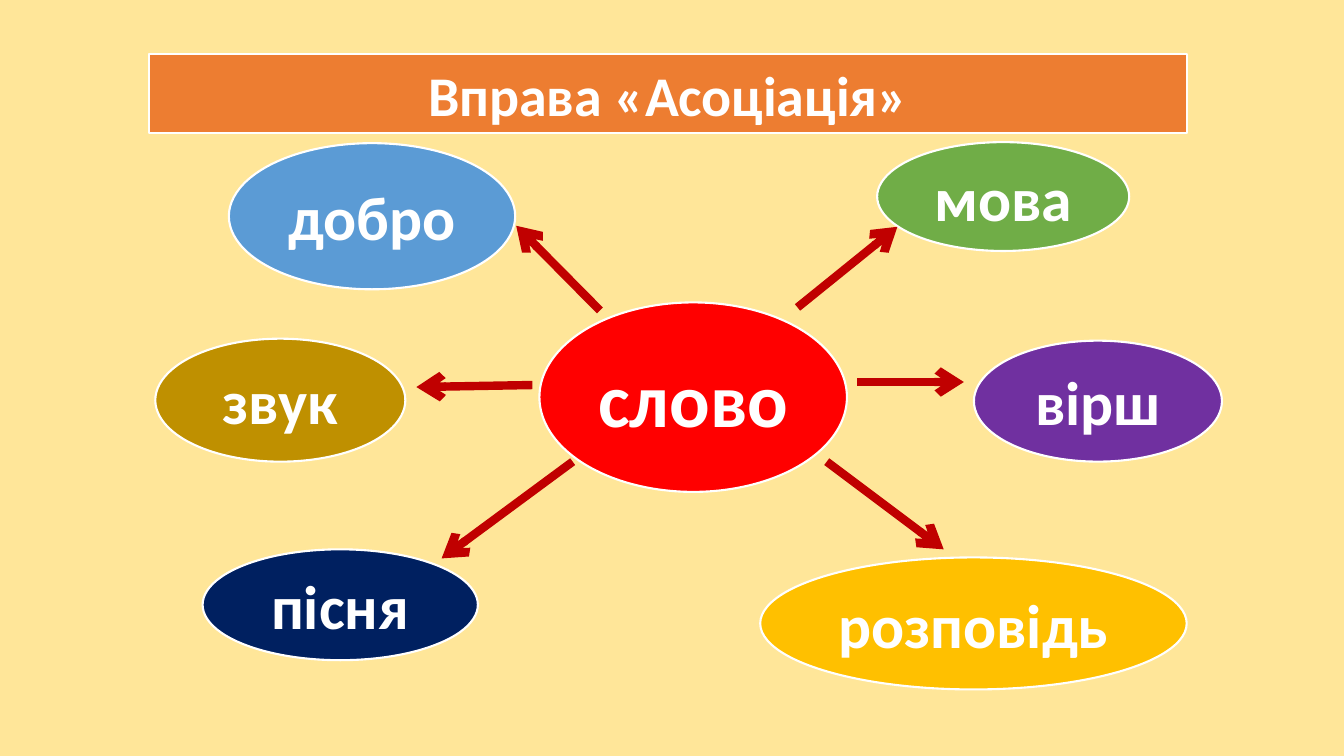
from lxml import etree
from pptx import Presentation
from pptx.dml.color import RGBColor
from pptx.enum.shapes import MSO_CONNECTOR, MSO_SHAPE
from pptx.enum.text import MSO_ANCHOR, MSO_AUTO_SIZE, PP_ALIGN
from pptx.oxml.ns import qn
from pptx.util import Inches, Pt

OVAL = MSO_SHAPE.OVAL
STRAIGHT = MSO_CONNECTOR.STRAIGHT
MIDDLE = MSO_ANCHOR.MIDDLE
CENTER = PP_ALIGN.CENTER
NO_AUTOFIT = MSO_AUTO_SIZE.NONE
TITLE_ONLY = 5
FONT = "Calibri"

COLORS = {
    "background": "FFE699",
    "white": "FFFFFF",
    "arrow": "C00000",
    "orange": "ED7D31",
    "blue": "5B9BD5",
    "ochre": "BF9000",
    "navy": "002060",
    "red": "FF0000",
    "green": "70AD47",
    "purple": "7030A0",
    "yellow": "FFC000",
}

TITLE = ("Вправа «Асоціація»", "orange", 40, (1.48, 0.54, 10.29, 0.78))
WORDS = [
    ("добро", "blue", 44, (2.27, 1.42, 2.84, 1.45)),
    ("звук", "ochre", 44, (1.54, 3.36, 2.48, 1.22)),
    ("пісня", "navy", 44, (2.01, 5.45, 2.73, 1.1)),
    ("слово", "red", 54, (5.35, 3, 3.05, 1.88)),
    ("мова", "green", 44, (8.7, 1.41, 2.5, 1.08)),
    ("вірш", "purple", 44, (9.66, 3.38, 2.46, 1.2)),
    ("розповідь", "yellow", 44, (7.54, 5.53, 4.23, 1.31)),
]
ARROWS = [
    (5.28, 3.82, 4.13, 3.84),
    (5.95, 3.08, 5.12, 2.24),
    (5.68, 4.58, 4.38, 5.54),
    (8.2, 4.58, 9.36, 5.45),
    (8.5, 3.79, 9.56, 3.79),
    (7.91, 3.05, 8.9, 2.25),
]


def rgb(name):
    return RGBColor.from_string(COLORS[name])


def inches(lengths):
    return [Inches(length) for length in lengths]


def style_label(shape, text, color, size):
    shape.fill.solid()
    shape.fill.fore_color.rgb = rgb(color)
    shape.line.color.rgb = rgb("white")
    shape.line.width = Pt(1.5)
    frame = shape.text_frame
    frame.text = text
    frame.word_wrap = True
    frame.auto_size = NO_AUTOFIT
    frame.vertical_anchor = MIDDLE
    para = frame.paragraphs[0]
    para.alignment = CENTER
    font = para.runs[0].font
    font.name = FONT
    font.size = Pt(size)
    font.bold = True
    font.color.rgb = rgb("white")


def add_title(page):
    text, color, size, bounds = TITLE
    title = page.shapes.title
    title.left, title.top, title.width, title.height = inches(bounds)
    style_label(title, text, color, size)


def add_word(page, text, color, size, bounds):
    oval = page.shapes.add_shape(OVAL, *inches(bounds))
    oval.shadow.inherit = False
    style_label(oval, text, color, size)


def add_arrow(page, ends):
    arrow = page.shapes.add_connector(STRAIGHT, *inches(ends))
    arrow.line.color.rgb = rgb("arrow")
    arrow.line.width = Pt(6)
    etree.SubElement(arrow.line._get_or_add_ln(), qn("a:tailEnd"), type="arrow")
    etree.SubElement(arrow._element.spPr, qn("a:effectLst"))


def main():
    deck = Presentation()
    deck.slide_width, deck.slide_height = inches((13.33, 7.5))
    page = deck.slides.add_slide(deck.slide_layouts[TITLE_ONLY])
    page.background.fill.solid()
    page.background.fill.fore_color.rgb = rgb("background")
    add_title(page)
    for word in WORDS:
        add_word(page, *word)
    for ends in ARROWS:
        add_arrow(page, ends)
    deck.save("out.pptx")


if __name__ == "__main__":
    main()
